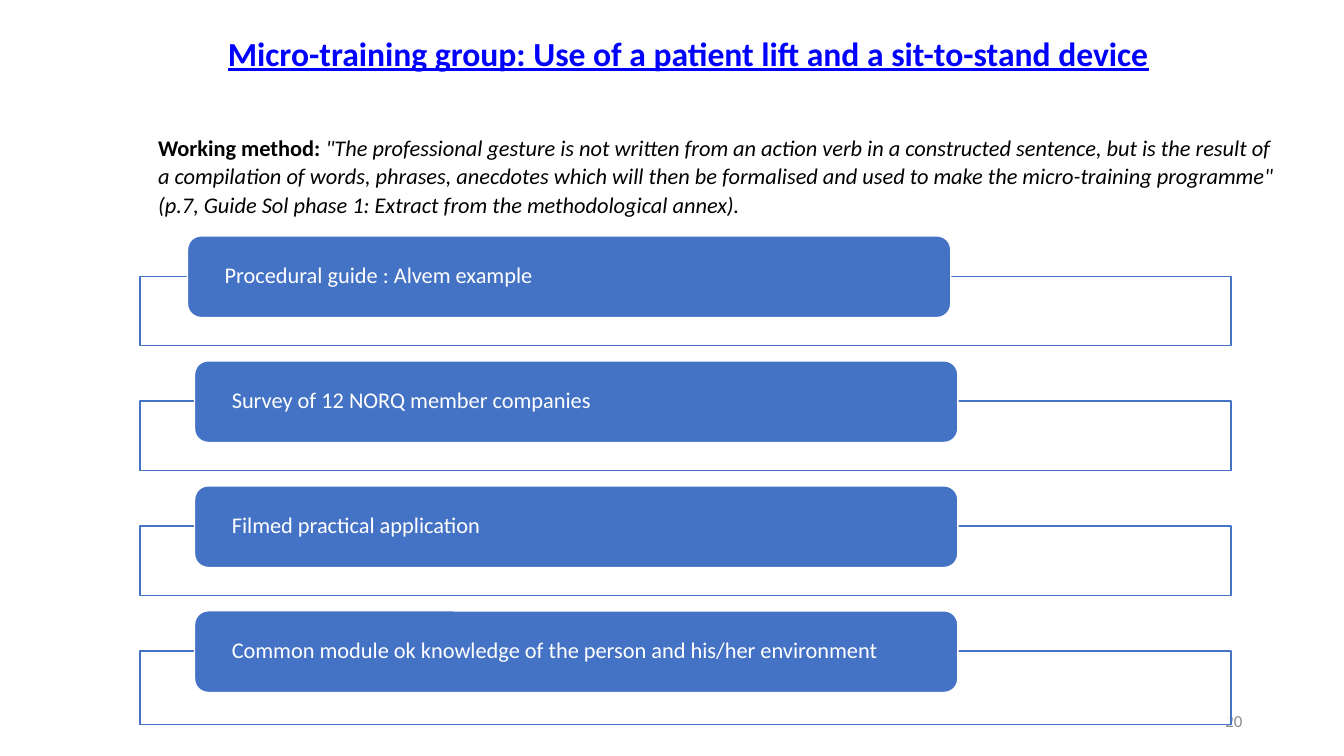
from lxml import etree
from pptx import Presentation
from pptx.dml.color import RGBColor
from pptx.enum.shapes import MSO_SHAPE
from pptx.enum.text import MSO_ANCHOR, MSO_AUTO_SIZE, PP_ALIGN
from pptx.oxml.ns import qn
from pptx.util import Inches, Pt

RECT, ROUND = MSO_SHAPE.RECTANGLE, MSO_SHAPE.ROUNDED_RECTANGLE
MIDDLE = MSO_ANCHOR.MIDDLE
LEFT, RIGHT, JUSTIFY = PP_ALIGN.LEFT, PP_ALIGN.RIGHT, PP_ALIGN.JUSTIFY
WHITE = RGBColor(0xFF, 0xFF, 0xFF)
BLACK = RGBColor(0, 0, 0)
BLUE = RGBColor(0x44, 0x72, 0xC4)
LINK = RGBColor(0, 0, 0xFF)
GREY = RGBColor(0x8C, 0x8C, 0x8C)

STEPS = [
    "Procedural guide : Alvem example",
    "Survey of 12 NORQ member companies",
    "Filmed practical application",
    "Common module ok knowledge of the person and his/her environment",
]
TOP, PITCH = 2.34, 1.24
DROP = 0.4  # from the top of a label to the top of its frame


def style(run, size, color, bold=False, italic=False):
    font = run.font
    font.name, font.size = "Calibri", Pt(size)
    font.bold, font.italic = bold, italic
    font.color.rgb = color


def add_box(kind, left, top, width, height, fill, line):
    box = slide.shapes.add_shape(
        kind, Inches(left), Inches(top), Inches(width), Inches(height))
    box.shadow.inherit = False
    box.fill.solid()
    box.fill.fore_color.rgb = fill
    box.line.color.rgb = line
    box.line.width = Pt(1)
    return box


prs = Presentation()
prs.slide_width, prs.slide_height = Inches(13.33), Inches(7.5)
slide = prs.slides.add_slide(prs.slide_layouts[5])

# Title
title = slide.shapes.title
title.left, title.top = Inches(2.16), Inches(0.08)
title.width, title.height = Inches(10.81), Inches(0.94)
frame = title.text_frame
frame.text = "Micro-training group: Use of a patient lift and a sit-to-stand device"
frame.auto_size = MSO_AUTO_SIZE.NONE
frame.vertical_anchor = MIDDLE
para = frame.paragraphs[0]
para.alignment, para.line_spacing = JUSTIFY, 0.9
style(para.runs[0], 24, LINK, bold=True)
para.runs[0].font.underline = True

# Page number, behind the last frame
page = slide.shapes.add_textbox(Inches(9.42), Inches(6.95), Inches(3), Inches(0.4))
frame = page.text_frame
frame.text = "20"
frame.word_wrap = True
frame.vertical_anchor = MIDDLE
para = frame.paragraphs[0]
para.alignment = RIGHT
style(para.runs[0], 12, GREY)

# Steps: a label over the upper edge of each frame
for i, step in enumerate(STEPS):
    top = TOP + i * PITCH
    left = 1.86 if i == 0 else 1.93
    deep = 0.73 if i == len(STEPS) - 1 else 0.69
    back = add_box(RECT, 1.39, top + DROP, 10.82, deep, WHITE, BLUE)
    tint = back.fill._xPr.find(qn("a:solidFill"))[0]
    etree.SubElement(tint, qn("a:alpha"), val="90000")

    label = add_box(ROUND, left, top, 7.57, 0.81, BLUE, WHITE)
    frame = label.text_frame
    frame.text = step
    frame.word_wrap = True
    frame.vertical_anchor = MIDDLE
    frame.margin_left = frame.margin_right = Inches(0.33)
    frame.margin_top = frame.margin_bottom = 0
    para = frame.paragraphs[0]
    para.alignment, para.line_spacing = LEFT, 0.9
    para.space_after = Pt(5.6)
    style(para.runs[0], 16, WHITE)

# Working method
method = slide.shapes.add_textbox(
    Inches(1.47), Inches(1.26), Inches(11.33), Inches(0.95))
frame = method.text_frame
frame.word_wrap = True
para = frame.paragraphs[0]
para.line_spacing, para.space_after = 1.07, Pt(8)
lead, quote = para.add_run(), para.add_run()
lead.text = "Working method: "
quote.text = (
    '"The professional gesture is not written from an action verb in a '
    "constructed sentence, but is the result of a compilation of words, "
    "phrases, anecdotes which will then be formalised and used to make the "
    'micro-training programme" (p.7, Guide Sol phase 1: Extract from the '
    "methodological annex).")
style(lead, 16, BLACK, bold=True)
style(quote, 16, BLACK, italic=True)

prs.save("out.pptx")
